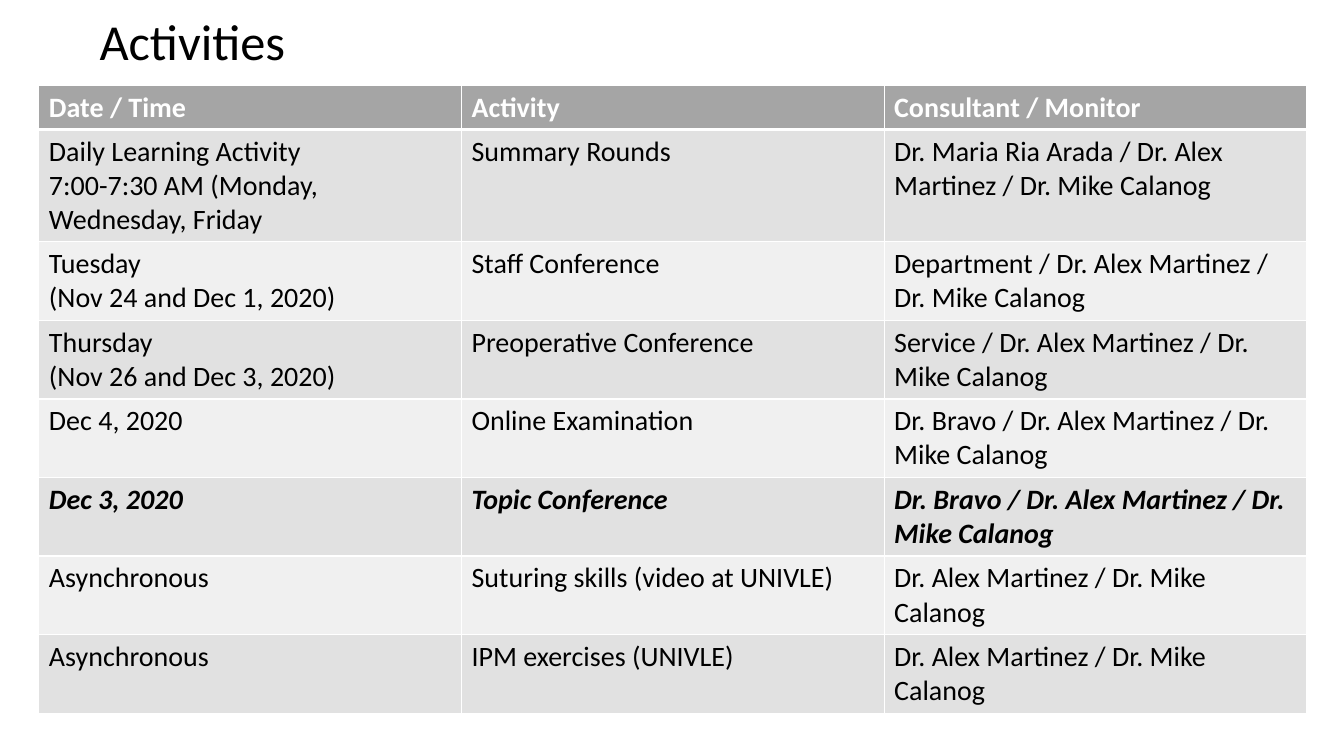
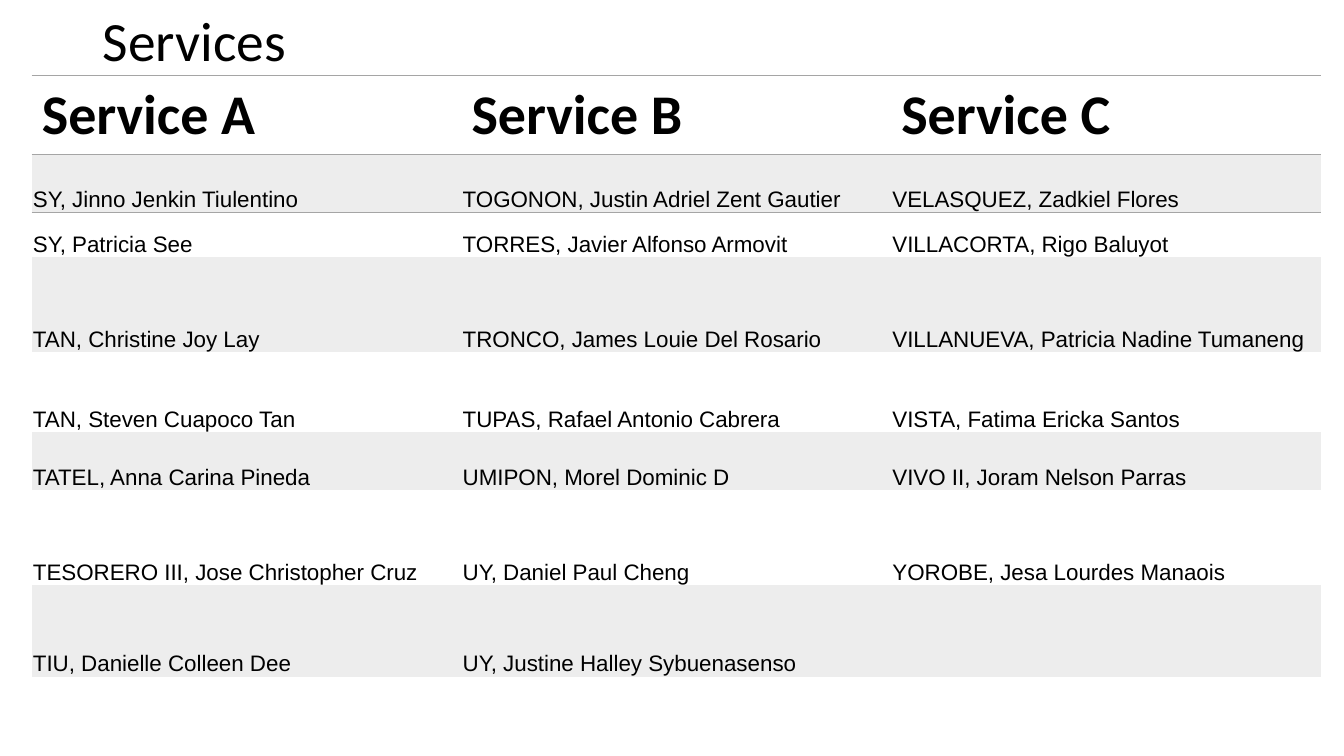
"""Builds the two schedule slides: activities and service groups."""
import pptx
import pptx.dml.color
import pptx.enum.text
import pptx.oxml
import pptx.oxml.ns
import pptx.util

Cm = pptx.util.Cm
Pt = pptx.util.Pt
ANCHOR = pptx.enum.text.MSO_ANCHOR

BLACK, WHITE, GREY = "000000", "FFFFFF", "A5A5A5"
DARK_BAND, LIGHT_BAND, SERVICE_BAND = "E1E1E1", "F0F0F0", "EDEDED"
PLAIN_TABLE_STYLE = "{2D5ABB26-0587-4C30-8999-92F81FD0307C}"
BORDER_SIDES = ("L", "R", "T", "B")

MONITORS = "Dr. Alex Martinez / Dr. Mike Calanog"
ACTIVITIES = [
    ("Date / Time", "Activity", "Consultant / Monitor"),
    ("Daily Learning Activity\n7:00-7:30 AM (Monday, Wednesday, Friday",
     "Summary Rounds", f"Dr. Maria Ria Arada / {MONITORS}"),
    ("Tuesday\n(Nov 24 and Dec 1, 2020)", "Staff Conference", f"Department / {MONITORS}"),
    ("Thursday\n(Nov 26 and Dec 3, 2020)", "Preoperative Conference", f"Service / {MONITORS}"),
    ("Dec 4, 2020", "Online Examination", f"Dr. Bravo / {MONITORS}"),
    ("Dec 3, 2020", "Topic Conference", f"Dr. Bravo / {MONITORS}"),
    ("Asynchronous", "Suturing skills (video at UNIVLE)", MONITORS),
    ("Asynchronous", "IPM exercises (UNIVLE)", MONITORS),
]
ACTIVITY_HEIGHTS = [1.1, 2.83] + [1.98] * 6
HIGHLIGHTED_ACTIVITY = 5

SERVICES = [
    ("Service A", "Service B", "Service C"),
    ("SY, Jinno Jenkin Tiulentino", "TOGONON, Justin Adriel Zent Gautier",
     "VELASQUEZ, Zadkiel Flores"),
    ("SY, Patricia See", "TORRES, Javier Alfonso Armovit", "VILLACORTA, Rigo Baluyot"),
    ("TAN, Christine Joy Lay", "TRONCO, James Louie Del Rosario",
     "VILLANUEVA, Patricia Nadine Tumaneng"),
    ("TAN, Steven Cuapoco Tan", "TUPAS, Rafael Antonio Cabrera", "VISTA, Fatima Ericka Santos"),
    ("TATEL, Anna Carina Pineda", "UMIPON, Morel Dominic D", "VIVO II, Joram Nelson Parras"),
    ("TESORERO III, Jose Christopher Cruz", "UY, Daniel Paul Cheng",
     "YOROBE, Jesa Lourdes Manaois"),
    ("TIU, Danielle Colleen Dee", "UY, Justine Halley Sybuenasenso", ""),
    ("", "", ""),
]
SERVICE_HEIGHTS = [1.98, 1.47, 1.12, 2.39, 2.01, 1.47, 2.39, 2.31, 1.68]


def colour(value):
    return pptx.dml.color.RGBColor.from_string(value)


def write_text(frame, text, size, font="Calibri", fill=BLACK, bold=False, italic=False):
    for index, line in enumerate(text.split("\n")):
        para = frame.paragraphs[0] if index == 0 else frame.add_paragraph()
        if not line:
            para.font.size = Pt(size)
            continue
        span = para.add_run()
        span.text = line
        span.font.name = font
        span.font.size = Pt(size)
        span.font.bold = bold
        span.font.italic = italic
        span.font.color.rgb = colour(fill)


def add_title(page, text, left, size):
    box = page.shapes.add_textbox(Cm(left), Cm(0.28), Cm(29.2), Cm(1.66))
    box.text_frame.word_wrap = True
    box.text_frame.vertical_anchor = ANCHOR.MIDDLE
    write_text(box.text_frame, text, size)
    box.text_frame.paragraphs[0].line_spacing = 0.9


def add_plain_table(page, left, top, column_width, heights, columns=3):
    frame = page.shapes.add_table(len(heights), columns, Cm(left), Cm(top),
                                  Cm(column_width * columns), Cm(sum(heights)))
    table = frame.table
    table.first_row = True
    table.horz_banding = False
    style = frame._element.find(".//" + pptx.oxml.ns.qn("a:tableStyleId"))
    style.text = PLAIN_TABLE_STYLE
    for column in table.columns:
        column.width = Cm(column_width)
    for row, height in zip(table.rows, heights):
        row.height = Cm(height)
    return table


def fill_cell(cell, fill):
    if fill:
        cell.fill.solid()
        cell.fill.fore_color.rgb = colour(fill)
    else:
        cell.fill.background()


def set_borders(cell, fill, widths):
    properties = cell._tc.get_or_add_tcPr()
    sides = [side for side in BORDER_SIDES if side in widths]
    for index, side in enumerate(sides):
        line = pptx.oxml.parse_xml(
            f'<a:ln{side} {pptx.oxml.ns.nsdecls("a")} w="{Pt(widths[side])}">'
            f'<a:solidFill><a:srgbClr val="{fill}"/></a:solidFill></a:ln{side}>')
        properties.insert(index, line)


def table_cells(table, rows):
    for row_index, row in enumerate(rows):
        for column_index, text in enumerate(row):
            yield row_index, table.cell(row_index, column_index), text


def add_activities(page):
    add_title(page, "Activities", 2.26, 36)
    table = add_plain_table(page, 0.98, 2.16, 10.65, ACTIVITY_HEIGHTS)
    for row, cell, text in table_cells(table, ACTIVITIES):
        header = row == 0
        highlighted = row == HIGHLIGHTED_ACTIVITY
        fill_cell(cell, GREY if header else DARK_BAND if row % 2 else LIGHT_BAND)
        set_borders(cell, WHITE, {"L": 1, "R": 1, "T": 3 if row == 1 else 1,
                                  "B": 3 if header else 1})
        write_text(cell.text_frame, text, 20, fill=WHITE if header else BLACK,
                   bold=header or highlighted, italic=highlighted)


def add_services(page):
    add_title(page, "Services", 2.34, 39.6)
    table = add_plain_table(page, 0.8, 1.91, 10.83, SERVICE_HEIGHTS)
    for row, cell, text in table_cells(table, SERVICES):
        fill_cell(cell, SERVICE_BAND if row % 2 else None)
        if row == 0:
            set_borders(cell, GREY, {"T": 1, "B": 1})
            write_text(cell.text_frame, text, 40, bold=True)
            continue
        if row == 1:
            set_borders(cell, GREY, {"T": 1})
        cell.vertical_anchor = ANCHOR.BOTTOM
        cell.margin_left = cell.margin_right = cell.margin_top = Cm(0.03)
        cell.margin_bottom = Cm(0)
        write_text(cell.text_frame, text, 16, font="Arial")


def main():
    deck = pptx.Presentation()
    deck.slide_width = Cm(33.87)
    deck.slide_height = Cm(19.05)
    for build in (add_activities, add_services):
        build(deck.slides.add_slide(deck.slide_layouts[6]))
    deck.save("out.pptx")


if __name__ == "__main__":
    main()
